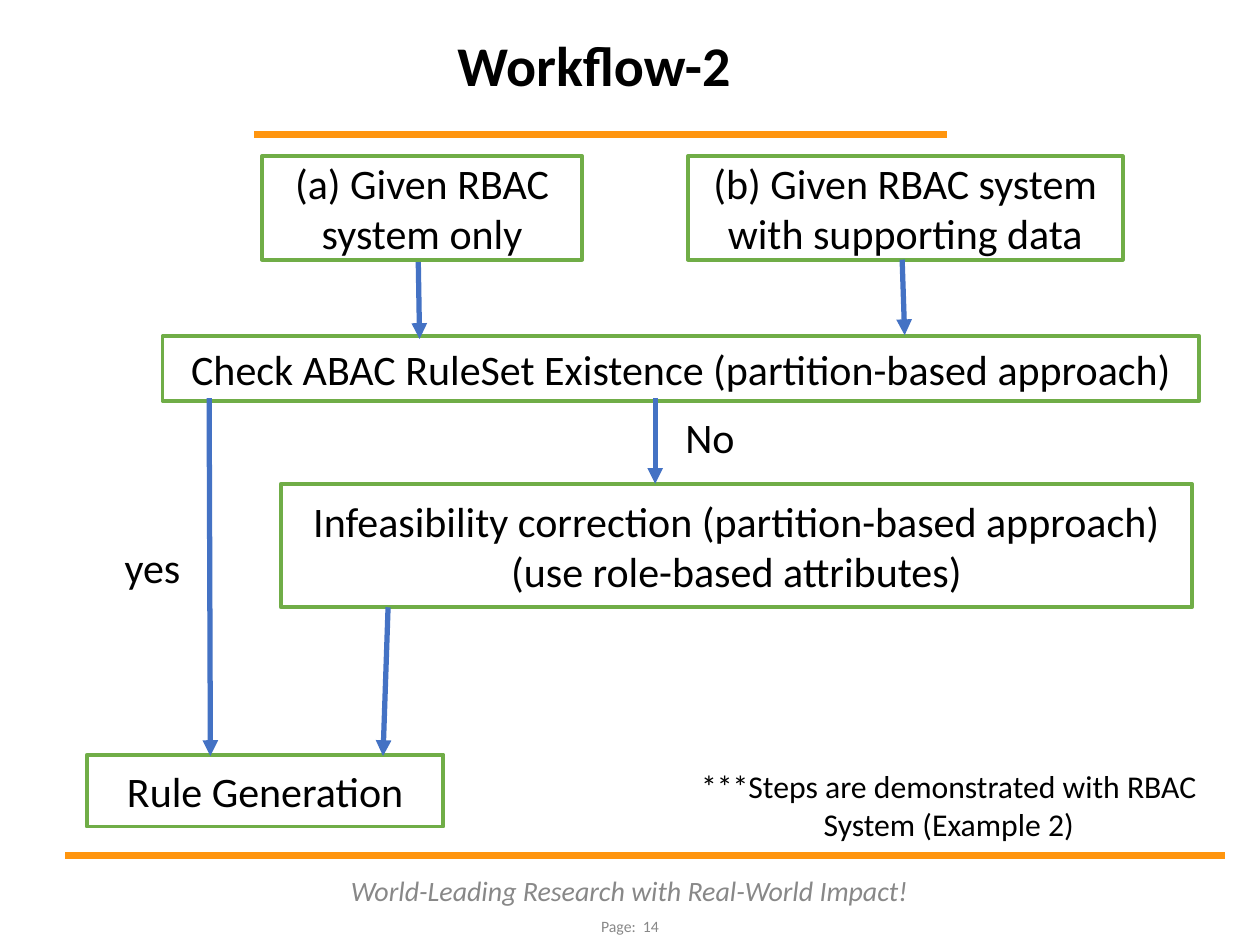
from dataclasses import dataclass

from lxml.etree import SubElement
from pptx import Presentation
from pptx.dml.color import RGBColor
from pptx.enum.shapes import MSO_CONNECTOR, MSO_SHAPE
from pptx.enum.text import MSO_ANCHOR, PP_ALIGN
from pptx.oxml.ns import qn
from pptx.util import Inches, Pt


@dataclass(frozen=True)
class Theme:
    """Colours and type sizes of the slide."""

    font: str = "Calibri"
    ink: RGBColor = RGBColor(0, 0, 0)
    paper: RGBColor = RGBColor(255, 255, 255)
    muted: RGBColor = RGBColor(0x88, 0x88, 0x88)
    rule: RGBColor = RGBColor(0xFF, 0x95, 0x0E)
    border: RGBColor = RGBColor(0x70, 0xAD, 0x47)
    flow: RGBColor = RGBColor(0x44, 0x72, 0xC4)
    title_size: float = 32
    step_size: float = 24
    note_size: float = 18.1
    motto_size: float = 16
    page_size: float = 9


THEME = Theme()


def apply_format(target, values):
    """Set each named attribute on the target."""
    for name, value in values.items():
        setattr(target, name, value)


def write(frame, text, size, anchor=MSO_ANCHOR.MIDDLE, inset=0.1, spacing=None,
          color=THEME.ink, **emphasis):
    """Fill a text frame with centred lines."""
    apply_format(frame, {
        "text": text, "word_wrap": True, "vertical_anchor": anchor,
        "margin_left": Inches(inset), "margin_right": Inches(inset),
    })
    for paragraph in frame.paragraphs:
        apply_format(paragraph, {"alignment": PP_ALIGN.CENTER, "line_spacing": spacing})
        apply_format(paragraph.font, {"name": THEME.font, "size": Pt(size), **emphasis})
        paragraph.font.color.rgb = color


def add_caption(slide, place, text, size, **style):
    """Add free-standing text."""
    caption = slide.shapes.add_textbox(*map(Inches, place))
    write(caption.text_frame, text, size, **style)


def add_step(slide, place, text, border=THEME.border, inset=0.1):
    """Add a bordered box of the workflow."""
    step = slide.shapes.add_shape(MSO_SHAPE.RECTANGLE, *map(Inches, place))
    step.shadow.inherit = False
    step.fill.solid()
    step.fill.fore_color.rgb = THEME.paper
    step.line.color.rgb = border
    step.line.width = Pt(2.25)
    write(step.text_frame, text, THEME.step_size, inset=inset)


def add_line(slide, ends, color, width):
    """Add a straight line without shadow and return it."""
    line = slide.shapes.add_connector(MSO_CONNECTOR.STRAIGHT, *map(Inches, ends))
    line.line.color.rgb = color
    line.line.width = Pt(width)
    SubElement(line._element.spPr, qn("a:effectLst"))
    return line


def add_arrow(slide, ends):
    """Add a flow line with an arrowhead at its end."""
    arrow = add_line(slide, ends, THEME.flow, 3)
    SubElement(arrow.line._get_or_add_ln(), qn("a:tailEnd"), type="triangle")


def add_frame(slide):
    """Add the rules, title and footer."""
    for ends in ((2.02, 1.07, 7.52, 1.07), (0.52, 6.79, 9.72, 6.79)):
        add_line(slide, ends, THEME.rule, 4)
    add_caption(slide, (2.58, 6.89, 4.83, 0.36),
                "World-Leading Research with Real-World Impact!",
                THEME.motto_size, color=THEME.muted, italic=True)
    add_caption(slide, (4.06, 7.17, 1.88, 0.36), "Page:  14",
                THEME.page_size, color=THEME.muted)
    add_caption(slide, (2.02, 0.33, 5.39, 0.5), "Workflow-2", THEME.title_size,
                anchor=MSO_ANCHOR.BOTTOM, spacing=0.9, bold=True)


def add_workflow(slide):
    """Add the steps, branch labels and arrows."""
    steps = (
        ((1.29, 2.67, 8.23, 0.51), "Check ABAC RuleSet Existence (partition-based approach)"),
        ((0.69, 5.99, 2.83, 0.57), "Rule Generation"),
        ((2.23, 3.84, 7.23, 0.98),
         "Infeasibility correction (partition-based approach)\n(use role-based attributes)"),
        ((5.46, 1.24, 3.45, 0.82), "(b) Given RBAC system with supporting data"),
        ((2.08, 1.24, 2.54, 0.82), "(a) Given RBAC system only"),
    )
    branches = (((0.85, 4.29, 0.72, 0.41), "yes"), ((5.33, 3.24, 0.61, 0.46), "No"))
    flows = (
        (1.66, 3.16, 1.67, 6), (5.2, 3.16, 5.2, 3.84), (3.08, 4.82, 3.04, 6),
        (7.16, 2.06, 7.18, 2.66), (3.32, 2.08, 3.33, 2.69),
    )
    for place, text in steps:
        add_step(slide, place, text)
    for place, text in branches:
        add_step(slide, place, text, border=THEME.paper, inset=0)
    for ends in flows:
        add_arrow(slide, ends)


def main():
    """Build and save the slide."""
    deck = Presentation()
    apply_format(deck, {"slide_width": Inches(10), "slide_height": Inches(7.5)})
    slide = deck.slides.add_slide(deck.slide_layouts[6])
    add_frame(slide)
    add_workflow(slide)
    add_caption(slide, (5.11, 6.11, 4.84, 0.56),
                "***Steps are demonstrated with RBAC System (Example 2)",
                THEME.note_size, inset=0.3)
    deck.save("out.pptx")


if __name__ == "__main__":
    main()
